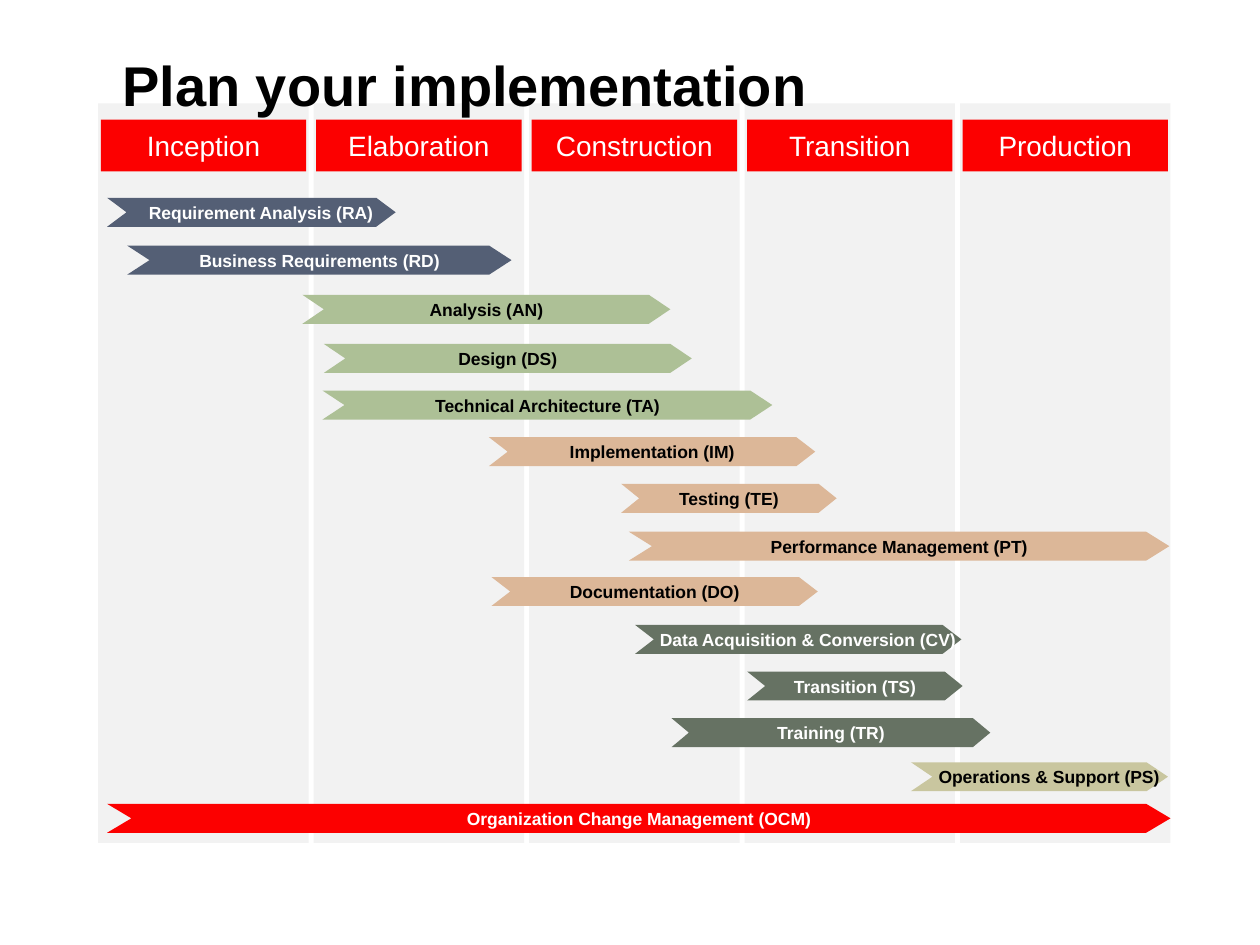
from pptx import Presentation
from pptx.dml.color import RGBColor
from pptx.enum.shapes import MSO_SHAPE
from pptx.enum.text import MSO_ANCHOR, MSO_AUTO_SIZE, PP_ALIGN
from pptx.util import Inches, Pt

COLORS = {
    "panel": "F2F2F2",
    "red": "FC0000",
    "slate": "545F75",
    "sage": "ADC096",
    "tan": "DCB798",
    "moss": "667263",
    "khaki": "C9C69F",
    "white": "FFFFFF",
    "black": "000000",
}
PHASES = ["Inception", "Elaboration", "Construction", "Transition", "Production"]
PHASE_STEP = 1.71
INDENT = 0.15

# label, left, top, width, notch, fill, text colour, extra left inset
PROCESSES = [
    ("Requirement Analysis (RA)", 0.85, 1.57, 2.29, 0.67, "slate", "white", INDENT),
    ("Business Requirements (RD)", 1.01, 1.95, 3.05, 0.77, "slate", "white", 0),
    ("Analysis (AN)", 2.4, 2.34, 2.92, 0.74, "sage", "black", 0),
    ("Design (DS)", 2.57, 2.73, 2.92, 0.74, "sage", "black", 0),
    ("Technical Architecture (TA)", 2.56, 3.1, 3.57, 0.76, "sage", "black", 0),
    ("Implementation (IM)", 3.88, 3.47, 2.59, 0.65, "tan", "black", 0),
    ("Testing (TE)", 4.93, 3.84, 1.71, 0.62, "tan", "black", 0),
    ("Performance Management (PT)", 4.99, 4.22, 4.29, 0.8, "tan", "black", 0),
    ("Documentation (DO)", 3.9, 4.58, 2.59, 0.65, "tan", "black", 0),
    ("Data Acquisition & Conversion (CV)", 5.04, 4.96, 2.59, 0.65, "moss", "white", INDENT),
    ("Transition (TS)", 5.93, 5.33, 1.71, 0.62, "moss", "white", 0),
    ("Training (TR)", 5.33, 5.7, 2.53, 0.6, "moss", "white", 0),
    ("Operations & Support (PS)", 7.23, 6.05, 2.04, 0.74, "khaki", "black", INDENT),
    ("Organization Change Management (OCM)", 0.85, 6.38, 8.44, 0.84, "red", "white", 0),
]


def apply_format(target, values):
    """Set each named attribute of the target."""
    for name, value in values.items():
        setattr(target, name, value)


def write_text(shape, text, size, color, bold, align, frame_format):
    """Put one formatted paragraph into a shape."""
    frame = shape.text_frame
    frame.text = text
    apply_format(frame, frame_format)
    paragraph = frame.paragraphs[0]
    paragraph.alignment = align
    font = paragraph.runs[0].font
    apply_format(font, {"name": "Arial", "size": Pt(size), "bold": bold})
    font.color.rgb = RGBColor.from_string(COLORS[color])


def add_block(slide, preset, left, top, width, height, fill):
    """Add a flat filled shape without outline."""
    block = slide.shapes.add_shape(
        preset, Inches(left), Inches(top), Inches(width), Inches(height)
    )
    block.shadow.inherit = False
    block.fill.solid()
    block.fill.fore_color.rgb = RGBColor.from_string(COLORS[fill])
    block.line.fill.background()
    return block


def add_label(block, text, size, color, bold, indent=0):
    """Centre an unwrapped label in a block."""
    write_text(block, text, size, color, bold, PP_ALIGN.CENTER, {
        "word_wrap": False,
        "vertical_anchor": MSO_ANCHOR.MIDDLE,
        "margin_left": Inches(0.1 + indent),
    })


def add_panels(slide):
    """Add the tall background column of every phase."""
    for column in range(len(PHASES)):
        left = 0.78 + column * PHASE_STEP
        add_block(slide, MSO_SHAPE.RECTANGLE, left, 0.82, 1.67, 5.87, "panel")


def add_title(slide):
    """Place the title in front of the panels."""
    title = slide.shapes.title
    apply_format(title, {
        "left": Inches(0.97), "top": Inches(0.36),
        "width": Inches(8.02), "height": Inches(1.03),
    })
    write_text(title, "Plan your implementation", 32, "black", True, PP_ALIGN.LEFT, {
        "word_wrap": True,
        "auto_size": MSO_AUTO_SIZE.NONE,
        "vertical_anchor": MSO_ANCHOR.TOP,
        "margin_left": 0, "margin_right": 0,
        "margin_top": Inches(0.04), "margin_bottom": 0,
    })
    slide.shapes._spTree.append(title._element)


def add_headers(slide):
    """Add the red heading of every phase."""
    for column, phase in enumerate(PHASES):
        left = 0.8 + column * PHASE_STEP
        header = add_block(slide, MSO_SHAPE.RECTANGLE, left, 0.95, 1.63, 0.41, "red")
        add_label(header, phase, 16, "white", False)


def add_process(slide, label, left, top, width, notch, fill, color, indent):
    """Add one process arrow across the phases."""
    arrow = add_block(slide, MSO_SHAPE.CHEVRON, left, top, width, 0.23, fill)
    arrow.adjustments[0] = notch
    add_label(arrow, label, 10, color, True, indent)


def main():
    """Build and save the implementation plan."""
    deck = Presentation()
    apply_format(deck, {"slide_width": Inches(10), "slide_height": Inches(7.5)})
    slide = deck.slides.add_slide(deck.slide_layouts.get_by_name("Title Only"))
    add_panels(slide)
    add_title(slide)
    add_headers(slide)
    for process in PROCESSES:
        add_process(slide, *process)
    deck.save("out.pptx")


if __name__ == "__main__":
    main()
